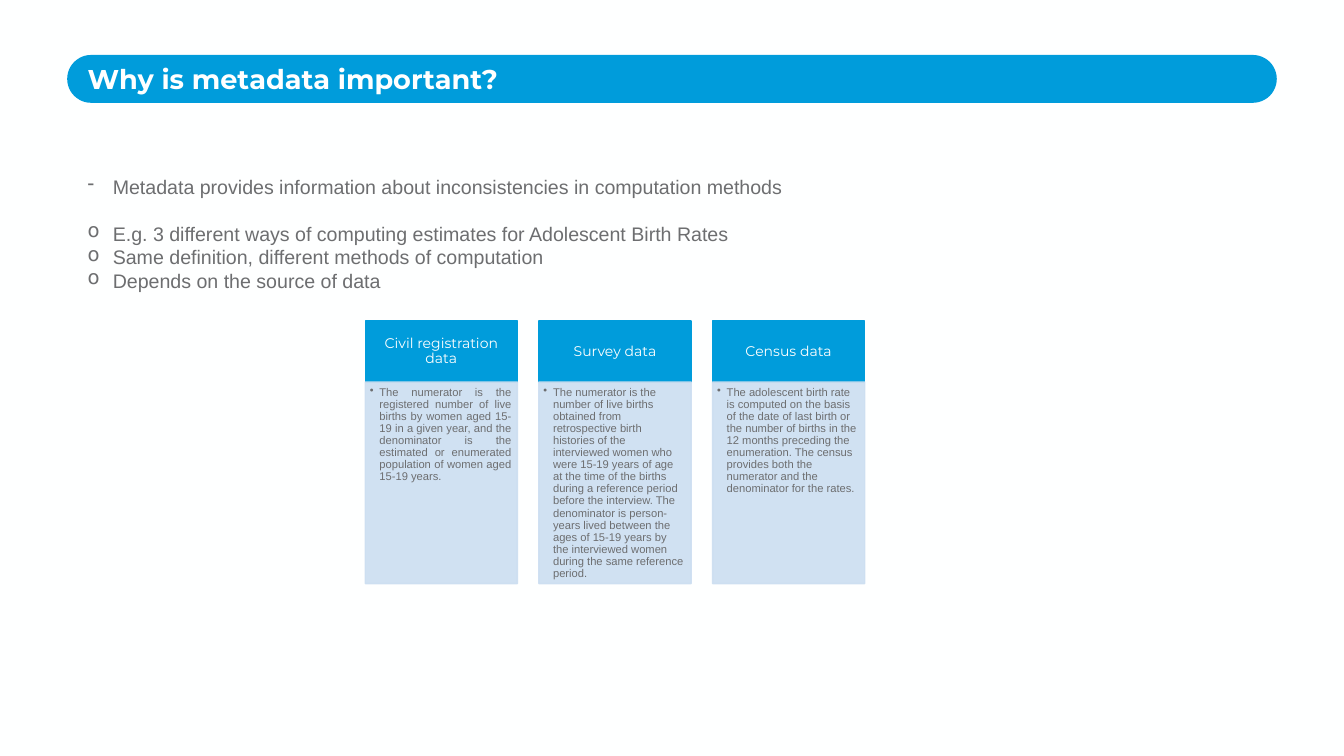
from dataclasses import dataclass

from lxml.etree import SubElement
from pptx import Presentation
from pptx.dml.color import RGBColor as RGB
from pptx.enum.shapes import MSO_SHAPE as SHAPE
from pptx.enum.text import MSO_ANCHOR as ANCHOR, MSO_AUTO_SIZE as FIT, PP_ALIGN as ALIGN
from pptx.oxml.ns import qn
from pptx.util import Inches, Pt


@dataclass(frozen=True)
class Theme:
    white: RGB = RGB.from_string("FEFFFF")
    blue: RGB = RGB.from_string("009CDB")
    pale: RGB = RGB.from_string("CCDEF1")
    grey: RGB = RGB.from_string("6D6E70")
    head_font: str = "Montserrat"
    body_font: str = "Arial"
    title: float = 38.8
    body: int = 28
    card_head: int = 20
    card_body: int = 16
    body_line: float = 33.6
    card_line: float = 0.9


T = Theme()
WIDTH, HEIGHT = Inches(26.67), Inches(15)

POINTS = [
    ("-", "Metadata provides information about inconsistencies in computation methods"),
    ("o", "E.g. 3 different ways of computing estimates for Adolescent Birth Rates"),
    ("o", "Same definition, different methods of computation"),
    ("o", "Depends on the source of data"),
]
CARDS = [
    ("Civil registration data", ALIGN.JUSTIFY,
     "The numerator is the registered number of live births by women aged 15-19 in a given "
     "year, and the denominator is the estimated or enumerated population of women aged "
     "15-19 years."),
    ("Survey data", ALIGN.LEFT,
     "The numerator is the number of live births obtained from retrospective birth histories "
     "of the interviewed women who were 15-19 years of age at the time of the births during a "
     "reference period before the interview. The denominator is person-years lived between "
     "the ages of 15-19 years by the interviewed women during the same reference period."),
    ("Census data", ALIGN.LEFT,
     "The adolescent birth rate is computed on the basis of the date of last birth or the "
     "number of births in the 12 months preceding the enumeration. The census provides both "
     "the numerator and the denominator for the rates."),
]


def share(x, y, w, h):
    """Turn percentages of the slide into a box."""
    return [int(v * side / 100) for v, side in zip((x, y, w, h), (WIDTH, HEIGHT) * 2)]


def set_attrs(obj, values):
    for name, value in values.items():
        setattr(obj, name, value)


def set_frame(tf, insets=(0, 0, 0, 0), anchor=ANCHOR.TOP):
    sides = ("margin_left", "margin_top", "margin_right", "margin_bottom")
    set_attrs(tf, dict(zip(sides, map(Inches, insets)), word_wrap=True,
                       auto_size=FIT.NONE, vertical_anchor=anchor))


def write(p, text, font, bullet=None, indent=0.0, **layout):
    if bullet:
        pPr = p._p.get_or_add_pPr()
        pPr.set("marL", str(Inches(indent)))
        pPr.set("indent", str(-Inches(indent)))
        SubElement(pPr, qn("a:buChar")).set("char", bullet)
    set_attrs(p, {"alignment": ALIGN.LEFT, **layout})
    r = p.add_run()
    r.text = text
    name, size, color, bold = font
    set_attrs(r.font, {"name": name, "size": Pt(size), "bold": bold})
    r.font.color.rgb = color


def add_block(slide, kind, box, color, outlined=True, alpha=None):
    sp = slide.shapes.add_shape(kind, *box)
    sp.shadow.inherit = False
    sp.fill.solid()
    sp.fill.fore_color.rgb = color
    if outlined:
        sp.line.color.rgb = color
        sp.line.width = Pt(2)
    else:
        sp.line.fill.background()
    if alpha:
        for clr in sp._element.spPr.iter(qn("a:srgbClr")):
            SubElement(clr, qn("a:alpha")).set("val", str(alpha * 1000))
    return sp


def add_title(slide, bar_box, text_box):
    # Rounded bar, placed behind the title
    bar = add_block(slide, SHAPE.ROUNDED_RECTANGLE, bar_box, T.blue, outlined=False)
    bar.adjustments[0] = 0.5
    title = slide.shapes.title
    title._element.addprevious(bar._element)
    set_attrs(title, dict(zip(("left", "top", "width", "height"), text_box)))
    set_frame(title.text_frame)
    write(title.text_frame.paragraphs[0], "Why is metadata important?",
          (T.head_font, T.title, T.white, True))


def add_points(slide, box):
    tf = slide.shapes.add_textbox(*box).text_frame
    set_frame(tf)
    for i, (bullet, text) in enumerate(POINTS):
        p = tf.paragraphs[0] if i == 0 else tf.add_paragraph()
        # One line of space parts the statement from its examples
        write(p, text, (T.body_font, T.body, T.grey, False), bullet, 0.5,
              line_spacing=Pt(T.body_line), space_before=Pt(T.body_line if i == 1 else 0))


def add_card(slide, box, heading, align, text):
    x, y, w, h = box
    head_h = int(h * 0.232)
    # Heading
    head = add_block(slide, SHAPE.RECTANGLE, (x, y, w, head_h), T.blue)
    set_frame(head.text_frame, (0.16, 0.09, 0.16, 0.09), ANCHOR.MIDDLE)
    write(head.text_frame.paragraphs[0], heading, (T.head_font, T.card_head, T.white, False),
          alignment=ALIGN.CENTER, line_spacing=T.card_line)
    # Explanation
    body = add_block(slide, SHAPE.RECTANGLE, (x, y + head_h, w, h - head_h), T.pale, alpha=90)
    set_frame(body.text_frame, (0.09, 0.09, 0.12, 0.14))
    write(body.text_frame.paragraphs[0], text, (T.body_font, T.card_body, T.grey, False),
          "•", 0.19, alignment=align, line_spacing=T.card_line)


def add_cards(slide, box, gap_share=0.043):
    x, y, w, h = box
    gap = int(w * gap_share)
    card_w = (w - gap * (len(CARDS) - 1)) // len(CARDS)
    for i, card in enumerate(CARDS):
        add_card(slide, (x + i * (card_w + gap), y, card_w, h), *card)


def main():
    prs = Presentation()
    set_attrs(prs, {"slide_width": WIDTH, "slide_height": HEIGHT})
    slide = prs.slides.add_slide(prs.slide_layouts.get_by_name("Title Only"))
    slide.background.fill.solid()
    slide.background.fill.fore_color.rgb = T.white
    add_title(slide, share(5, 7.27, 90, 6.33), share(6.52, 8.2, 87.06, 8.73))
    add_points(slide, share(6.52, 23.07, 87.06, 15.73))
    add_cards(slide, share(27.18, 42.47, 37.16, 34.73))
    prs.save("out.pptx")


if __name__ == "__main__":
    main()
